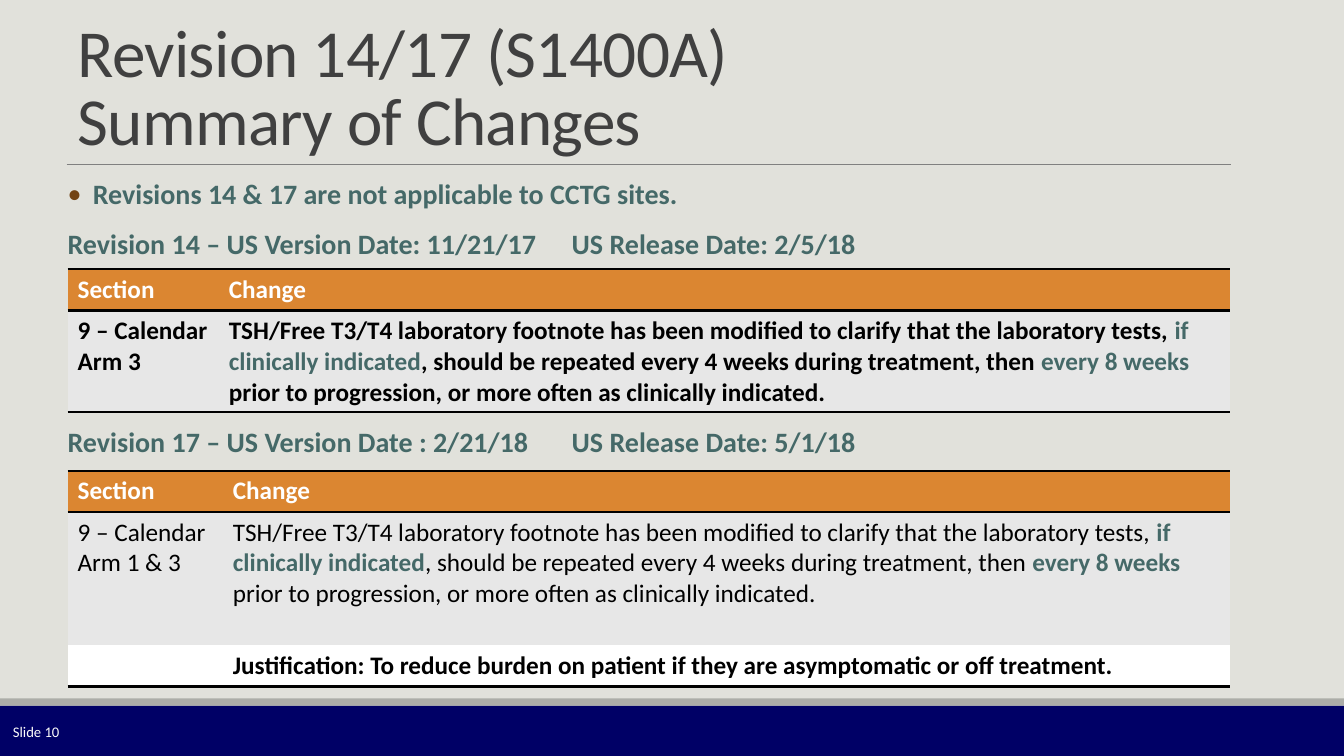
"""Build the slide summarising the changes in revisions 14 and 17."""
from lxml.etree import SubElement
from pptx import Presentation
from pptx.dml.color import RGBColor
from pptx.enum.shapes import MSO_CONNECTOR as Connector, MSO_SHAPE as Shape
from pptx.enum.text import MSO_ANCHOR as Anchor, MSO_AUTO_SIZE as AutoSize, PP_ALIGN as Align
from pptx.oxml.ns import qn
from pptx.util import Inches, Pt

COLORS = {"page": "E1E1DB", "navy": "000066", "gray": "ACADA8", "rule": "808080",
          "title": "404040", "teal": "456968", "bullet": "724314", "number": "FBFBFB",
          "black": "000000", "white": "FFFFFF", "orange": "DB8631", "cell": "E7E7E7"}
FONT = "Calibri"
WIDTH, HEIGHT = 13.33, 7.5
LEFT, CONTENT = 0.67, 11.53
FOOTER = 0.5
STRIPE = 0.07
RULE_Y = 1.63
HEADER_ROW = 0.41
TAB = 5

TITLE = ["Revision 14/17 (S1400A)", "Summary of Changes"]
BODY = [("Revisions 14 & 17 are not applicable to CCTG sites.", 0, True),
        ("Revision 14 – US Version Date: 11/21/17\tUS Release Date: 2/5/18", 12, False),
        ("Revision 17 – US Version Date : 2/21/18\tUS Release Date: 5/1/18", 118, False)]
SLIDE_NUMBER = "Slide 10"
HEADER = [[("Section", "white", True)], [("Change", "white", True)]]


def footnote(bold):
    return [("TSH/Free T3/T4 laboratory footnote has been modified to clarify that the "
             "laboratory tests, ", "black", bold),
            ("if clinically indicated", "teal", True),
            (", should be repeated every 4 weeks during treatment, then ", "black", bold),
            ("every 8 weeks ", "teal", True),
            ("prior to progression, or more often as clinically indicated.", "black", bold)]


JUSTIFICATION = ("Justification: To reduce burden on patient if they are asymptomatic "
                 "or off treatment.")
TABLES = [
    {"top": 2.67, "section": 1.5, "rows": [
        (HEADER_ROW, "orange", HEADER),
        (1.01, "cell", [[("9 – Calendar Arm 3", "black", True)], footnote(True)])]},
    {"top": 4.67, "section": 1.54, "rows": [
        (HEADER_ROW, "orange", HEADER),
        (1.32, "cell", [[("9 – Calendar Arm 1 & 3", "black", False)], footnote(False)]),
        (HEADER_ROW, "white", [[], [(JUSTIFICATION, "black", True)]])]},
]


def color(name):
    return RGBColor.from_string(COLORS[name])


def add_run(para, text, size, tint, bold=False):
    span = para.add_run()
    span.text = text
    span.font.name, span.font.size, span.font.bold = FONT, Pt(size), bold
    span.font.color.rgb = color(tint)
    return span


def place(shape, left, top, width, height):
    shape.left, shape.top = Inches(left), Inches(top)
    shape.width, shape.height = Inches(width), Inches(height)


def add_bar(page, top, height, tint):
    bar = page.shapes.add_shape(Shape.RECTANGLE, 0, Inches(top), Inches(WIDTH), Inches(height))
    bar.shadow.inherit = False
    bar.fill.solid()
    bar.fill.fore_color.rgb = color(tint)
    bar.line.fill.background()


def add_frame(page):
    add_bar(page, HEIGHT - FOOTER, FOOTER, "navy")
    add_bar(page, HEIGHT - FOOTER - STRIPE, STRIPE, "gray")
    rule = page.shapes.add_connector(Connector.STRAIGHT, Inches(0.66), Inches(RULE_Y),
                                     Inches(12.21), Inches(RULE_Y))
    rule.line.color.rgb = color("rule")
    rule.line.width = Pt(0.5)
    SubElement(rule._element.spPr, qn("a:effectLst"))
    box = page.shapes.add_textbox(Inches(0.03), Inches(7.06), Inches(1.56), Inches(0.4))
    box.text_frame.word_wrap = True
    box.text_frame.vertical_anchor = Anchor.MIDDLE
    add_run(box.text_frame.paragraphs[0], SLIDE_NUMBER, 10.5, "number")


def fill_title(title):
    place(title, LEFT, 0.04, CONTENT, RULE_Y - 0.04)
    frame = title.text_frame
    frame.auto_size, frame.vertical_anchor = AutoSize.NONE, Anchor.BOTTOM
    para = frame.paragraphs[0]
    para.alignment, para.line_spacing = Align.LEFT, 0.85
    for index, line in enumerate(TITLE):
        if index:
            para.add_line_break()
        add_run(para, line, 48, "title").font._element.set("spc", "-50")


def format_list(para, bulleted):
    indent = Inches(0.25) if bulleted else 0
    props = para._p.get_or_add_pPr()
    props.set("marL", str(indent))
    props.set("indent", str(-indent))
    if bulleted:
        tint = SubElement(props, qn("a:buClr"))
        SubElement(tint, qn("a:srgbClr"), val=COLORS["bullet"])
        SubElement(props, qn("a:buFont"), typeface=FONT)
        SubElement(props, qn("a:buChar"), char="•")
    else:
        SubElement(props, qn("a:buNone"))
        stops = SubElement(props, qn("a:tabLst"))
        SubElement(stops, qn("a:tab"), pos=str(Inches(TAB)), algn="l")


def fill_body(body):
    place(body, LEFT, 1.74, CONTENT, 4.68)
    frame = body.text_frame
    frame.auto_size, frame.vertical_anchor = AutoSize.NONE, Anchor.TOP
    frame.margin_left = frame.margin_right = 0
    for index, (text, before, bulleted) in enumerate(BODY):
        para = frame.add_paragraph() if index else frame.paragraphs[0]
        format_list(para, bulleted)
        para.line_spacing = 0.9
        para.space_before, para.space_after = Pt(before), Pt(2)
        add_run(para, text, 20, "teal", True)


def set_borders(cell, ruled):
    props = cell._tc.get_or_add_tcPr()
    for side in ("lnL", "lnR", "lnT", "lnB"):
        line = SubElement(props, qn("a:" + side), w=str(Pt(2)))
        if side in ruled:
            fill = SubElement(line, qn("a:solidFill"))
            SubElement(fill, qn("a:srgbClr"), val=COLORS["black"])
        else:
            SubElement(line, qn("a:noFill"))


def add_changes(page, top, section, rows):
    height = sum(row[0] for row in rows)
    table = page.shapes.add_table(len(rows), 2, Inches(LEFT), Inches(top),
                                  Inches(CONTENT), Inches(height)).table
    table.horz_banding = False
    table.columns[0].width = Inches(section)
    table.columns[1].width = Inches(CONTENT - section)
    for index, (row_height, tint, contents) in enumerate(rows):
        table.rows[index].height = Inches(row_height)
        ruled = {"lnT"} if index < 2 else set()
        if index in (0, len(rows) - 1):
            ruled.add("lnB")
        for column, spans in enumerate(contents):
            cell = table.cell(index, column)
            set_borders(cell, ruled)
            cell.fill.solid()
            cell.fill.fore_color.rgb = color(tint)
            for text, ink, bold in spans:
                add_run(cell.text_frame.paragraphs[0], text, 18, ink, bold)


def main():
    deck = Presentation()
    deck.slide_width, deck.slide_height = Inches(WIDTH), Inches(HEIGHT)
    page = deck.slides.add_slide(deck.slide_layouts[1])
    page.background.fill.solid()
    page.background.fill.fore_color.rgb = color("page")
    add_frame(page)
    fill_title(page.shapes.title)
    fill_body(page.placeholders[1])
    for changes in TABLES:
        add_changes(page, **changes)
    deck.save("out.pptx")


if __name__ == "__main__":
    main()
